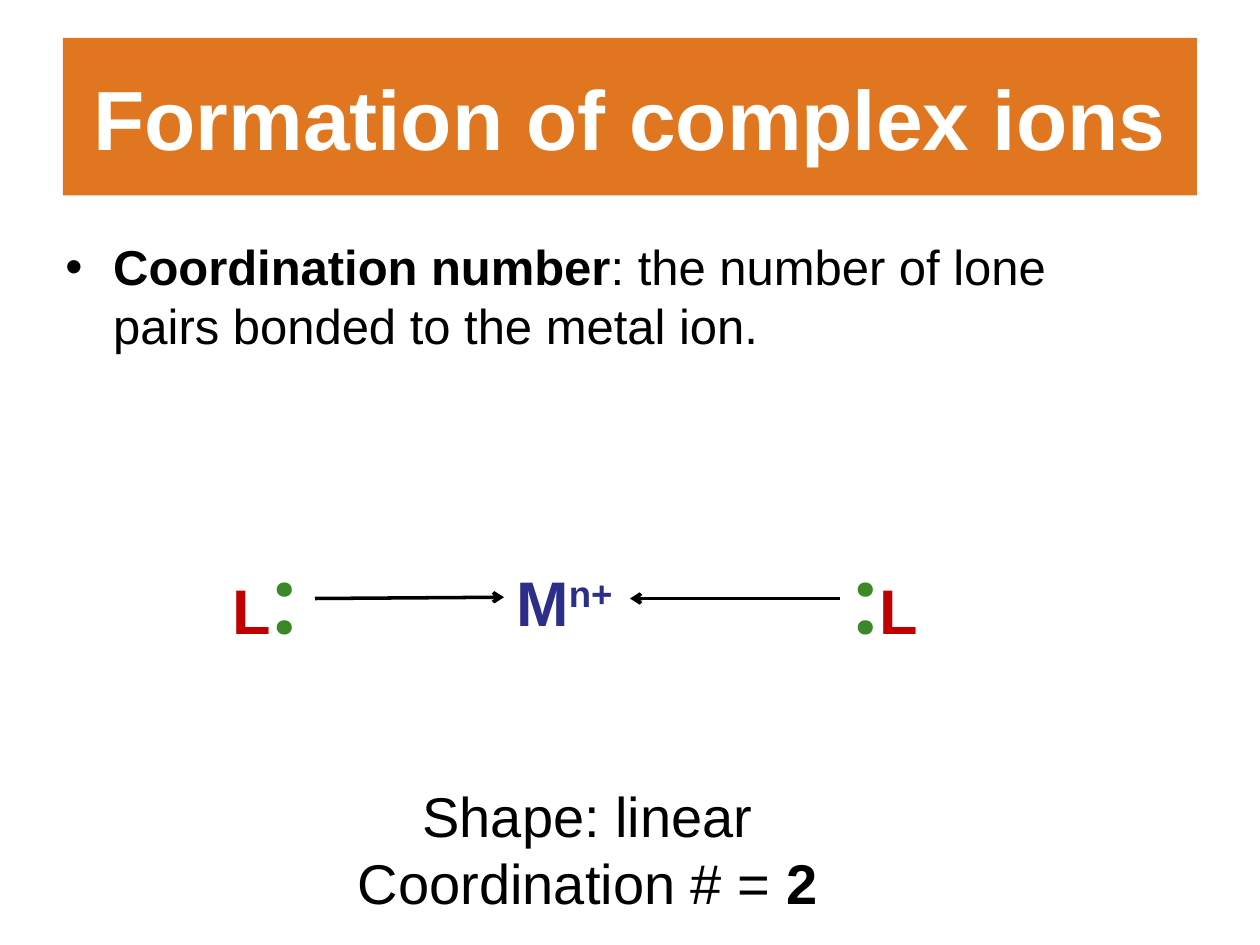
import pptx
import pptx.dml.color
import pptx.enum.shapes
import pptx.enum.text
import pptx.oxml
import pptx.oxml.ns
import pptx.util
from pptx.util import Inches

BLACK, WHITE, ORANGE = "000000", "FFFFFF", "E07720"
METAL, LIGAND, LONE_PAIR = "2D2D8A", "C00000", "3A8828"
CENTER = pptx.enum.text.PP_ALIGN.CENTER


def rgb(hex_color):
    return pptx.dml.color.RGBColor.from_string(hex_color)


def append_xml(parent, tag, attributes=""):
    namespace = pptx.oxml.ns.nsdecls("a")
    parent.append(pptx.oxml.parse_xml(f"<a:{tag} {namespace} {attributes}/>"))


def add_run(paragraph, text, size, color=BLACK, bold=False, font="Arial"):
    run = paragraph.add_run()
    run.text = text
    run.font.size = pptx.util.Pt(size)
    run.font.name = font
    run.font.bold = bold
    run.font.color.rgb = rgb(color)
    return run


def add_text_frame(slide, left, top, width, height):
    box = slide.shapes.add_textbox(
        Inches(left), Inches(top), Inches(width), Inches(height))
    box.text_frame.word_wrap = True
    return box.text_frame


def add_title(slide, text):
    banner = slide.shapes.add_shape(
        pptx.enum.shapes.MSO_SHAPE.RECTANGLE,
        Inches(0.5), Inches(0.3), Inches(9), Inches(1.25))
    banner.shadow.inherit = False
    banner.fill.solid()
    banner.fill.fore_color.rgb = rgb(ORANGE)
    banner.line.fill.background()
    frame = banner.text_frame
    frame.word_wrap = True
    frame.vertical_anchor = pptx.enum.text.MSO_ANCHOR.MIDDLE
    frame.paragraphs[0].alignment = CENTER
    add_run(frame.paragraphs[0], text, 48, WHITE, bold=True)


def add_definition(slide, term, meaning):
    paragraph = add_text_frame(slide, 0.42, 1.83, 8.92, 4.95).paragraphs[0]
    paragraph.space_before = pptx.util.Pt(5.6)
    properties = paragraph._p.get_or_add_pPr()
    indent = Inches(0.38)
    properties.set("marL", str(indent))
    properties.set("indent", str(-indent))
    append_xml(properties, "buFont", 'typeface="Arial"')
    append_xml(properties, "buChar", 'char="•"')
    add_run(paragraph, term, 28, bold=True)
    add_run(paragraph, meaning, 28)


def add_metal_ion(slide):
    paragraph = add_text_frame(slide, 4, 4.42, 1.33, 0.71).paragraphs[0]
    add_run(paragraph, "M", 36, METAL, bold=True)
    charge = add_run(paragraph, "n+", 36, METAL, bold=True)
    charge.font._element.set("baseline", "30000")


def add_ligand(slide, left, symbols):
    """Write the ligand letter and its lone pair in the given order."""
    paragraph = add_text_frame(slide, left, 4.24, 0.92, 1.01).paragraphs[0]
    for symbol in symbols:
        if symbol == ":":
            add_run(paragraph, symbol, 54, LONE_PAIR, bold=True, font="Roboto")
        else:
            add_run(paragraph, symbol, 36, LIGAND, bold=True)


def add_bond_arrow(slide, start, end):
    arrow = slide.shapes.add_connector(
        pptx.enum.shapes.MSO_CONNECTOR.STRAIGHT,
        *(Inches(value) for value in (*start, *end)))
    arrow.line.color.rgb = rgb(BLACK)
    arrow.line.width = pptx.util.Pt(2)
    append_xml(arrow.line._get_or_add_ln(), "tailEnd", 'type="arrow"')
    append_xml(arrow._element.spPr, "effectLst")


def add_summary(slide, shape, label, number):
    frame = add_text_frame(slide, 1.33, 6.15, 6.67, 1.18)
    shape_line, number_line = frame.paragraphs[0], frame.add_paragraph()
    shape_line.alignment = number_line.alignment = CENTER
    add_run(shape_line, shape, 32)
    add_run(number_line, label, 32)
    add_run(number_line, number, 32, bold=True)


def main():
    presentation = pptx.Presentation()
    presentation.slide_width = Inches(10)
    presentation.slide_height = Inches(7.5)
    slide = presentation.slides.add_slide(presentation.slide_layouts[6])

    add_title(slide, "Formation of complex ions")
    add_definition(slide, "Coordination number",
                   ": the number of lone pairs bonded to the metal ion.")
    add_metal_ion(slide)
    add_ligand(slide, 1.75, "L:")
    add_ligand(slide, 6.67, ":L")
    add_bond_arrow(slide, (2.5, 4.75), (4, 4.74))
    add_bond_arrow(slide, (6.67, 4.75), (5, 4.75))
    add_summary(slide, "Shape: linear", "Coordination # = ", "2")
    presentation.save("out.pptx")


if __name__ == "__main__":
    main()
